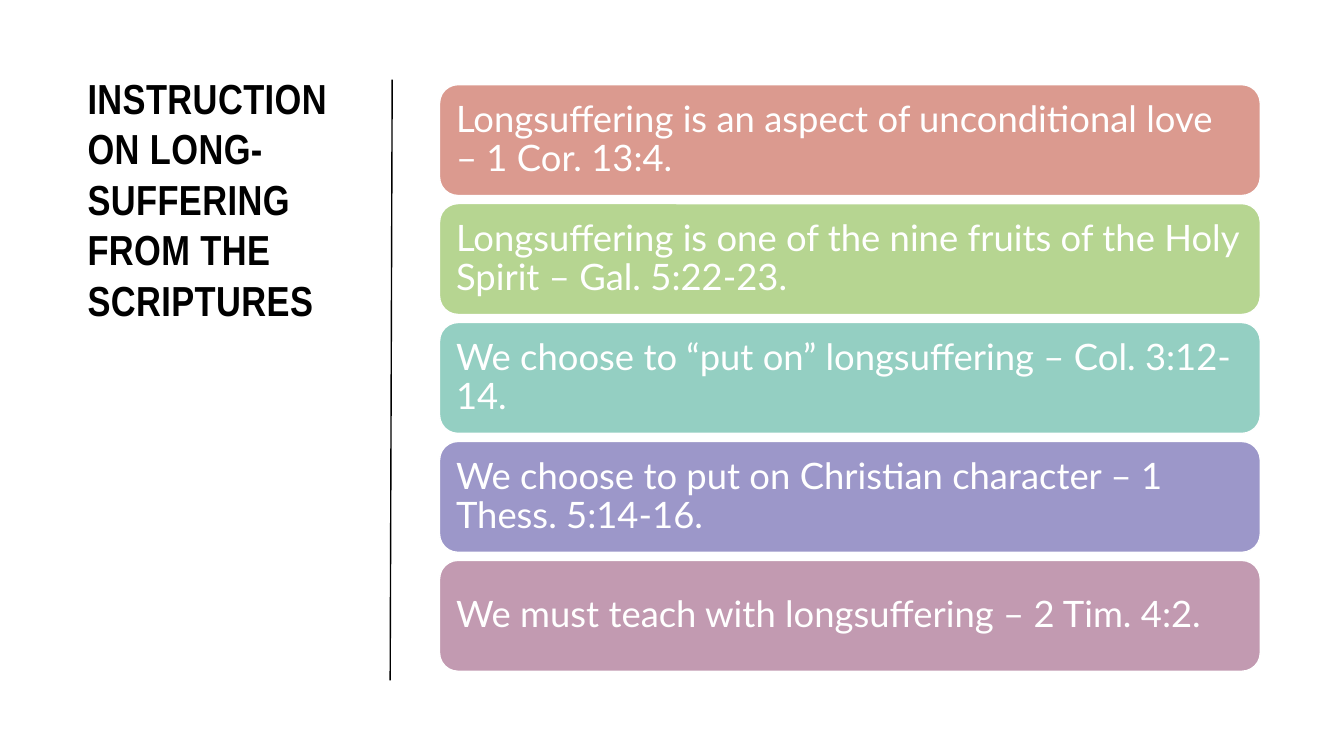
from pptx import Presentation
from pptx.dml.color import RGBColor as RGB
from pptx.enum.shapes import MSO_CONNECTOR as LINE, MSO_SHAPE as SHAPE
from pptx.enum.text import MSO_ANCHOR as ANCHOR, PP_ALIGN as ALIGN
from pptx.oxml.ns import qn
from pptx.util import Inches, Pt
from lxml import etree

BLACK = RGB(0x00, 0x00, 0x00)
WHITE = RGB(0xFF, 0xFF, 0xFF)
ROSE = RGB(0xDB, 0x9A, 0x8F)
GREEN = RGB(0xB6, 0xD5, 0x91)
TEAL = RGB(0x94, 0xCF, 0xC2)
VIOLET = RGB(0x9C, 0x97, 0xC9)
MAUVE = RGB(0xC2, 0x9A, 0xB1)

TITLE = "INSTRUCTION ON LONG-SUFFERING FROM THE SCRIPTURES"
POINTS = [
    ("Longsuffering is an aspect of unconditional love – 1 Cor. 13:4.", ROSE),
    ("Longsuffering is one of the nine fruits of the Holy Spirit – Gal. 5:22-23.", GREEN),
    ("We choose to “put on” longsuffering – Col. 3:12-14.", TEAL),
    ("We choose to put on Christian character – 1 Thess. 5:14-16.", VIOLET),
    ("We must teach with longsuffering – 2 Tim. 4:2.", MAUVE),
]
LEFT, TOP, WIDTH, HEIGHT, STEP = 4.36, 0.84, 8.14, 1.1, 1.18
INSET = 0.16


def write(frame, text, name, size, color, bold=False):
    frame.word_wrap = True
    para = frame.paragraphs[0]
    para.alignment = ALIGN.LEFT
    para.add_run().text = text
    font = para.font
    font.name, font.size, font.bold = name, Pt(size), bold
    font.color.rgb = color
    return para


def add_title(slide):
    box = slide.shapes.add_textbox(Inches(0.77), Inches(0.67), Inches(2.76), Inches(4.91))
    para = write(box.text_frame, TITLE, "Arial Narrow", 30, BLACK, True)
    para.line_spacing = Pt(36)
    para.runs[0].font._element.set("spc", "30")


def add_rule(slide):
    rule = slide.shapes.add_connector(
        LINE.STRAIGHT, Inches(3.87), Inches(6.75), Inches(3.89), Inches(0.79))
    rule.line.color.rgb = BLACK
    rule.line.width = Pt(1)
    etree.SubElement(rule._element.spPr, qn("a:effectLst"))


def add_bar(slide, top, text, color):
    bar = slide.shapes.add_shape(
        SHAPE.ROUNDED_RECTANGLE, Inches(LEFT), Inches(top), Inches(WIDTH), Inches(HEIGHT))
    bar.shadow.inherit = False
    bar.fill.solid()
    bar.fill.fore_color.rgb = color
    bar.line.color.rgb = WHITE
    bar.line.width = Pt(1)
    frame = bar.text_frame
    frame.vertical_anchor = ANCHOR.MIDDLE
    # The rounded corners add about 0.05 inch to each inset.
    frame.margin_left = frame.margin_right = Inches(INSET - 0.05)
    frame.margin_top = frame.margin_bottom = Inches(INSET - 0.05)
    write(frame, text, "Lato", 26, WHITE).line_spacing = 0.9


def main():
    deck = Presentation()
    deck.slide_width, deck.slide_height = Inches(13.33), Inches(7.5)
    slide = deck.slides.add_slide(deck.slide_layouts[6])
    add_title(slide)
    add_rule(slide)
    for row, (text, color) in enumerate(POINTS):
        add_bar(slide, TOP + row * STEP, text, color)
    deck.save("out.pptx")


if __name__ == "__main__":
    main()
